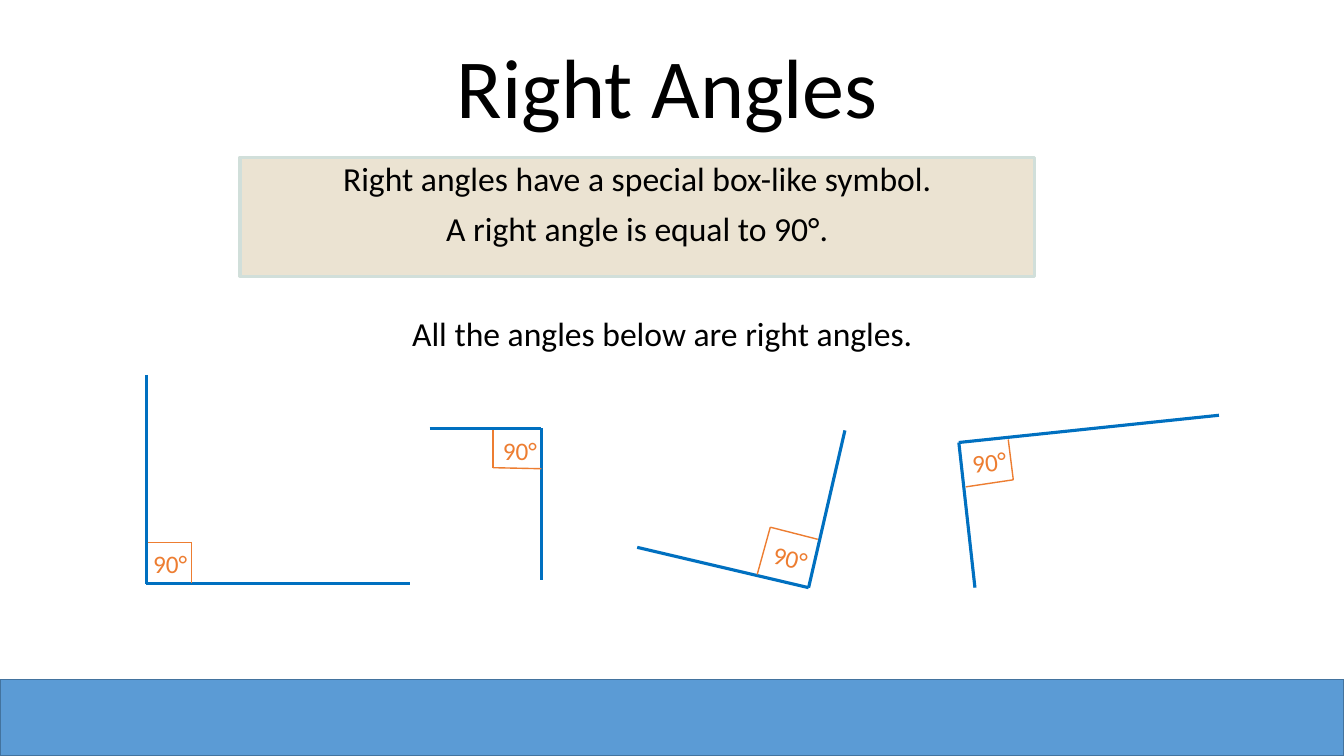
from dataclasses import dataclass
from typing import Any

from lxml.etree import SubElement
from pptx import Presentation
from pptx.dml.color import RGBColor
from pptx.enum.shapes import MSO_CONNECTOR, MSO_SHAPE
from pptx.enum.text import MSO_ANCHOR, MSO_AUTO_SIZE, PP_ALIGN
from pptx.oxml.ns import qn
from pptx.util import Inches, Pt

Point = tuple[float, float]
Rect = tuple[float, float, float, float]

BLACK = "000000"
BLUE = "0070C0"
ORANGE = "ED7D31"


@dataclass(frozen=True)
class Angle:
    rays: tuple[Point, Point, Point]
    mark: tuple[Point, Point, Point]
    label: Rect
    turn: float = 0


@dataclass(frozen=True)
class Panel:
    area: Rect
    fill: str
    edge: str
    width: float


ANGLES = [
    Angle(((1.45, 3.72), (1.45, 5.79), (4.07, 5.79)),
          ((1.47, 5.38), (1.9, 5.38), (1.9, 5.78)), (1.42, 5.39, 0.59, 0.4)),
    Angle(((4.26, 4.25), (5.37, 4.25), (5.37, 5.75)),
          ((4.89, 4.27), (4.89, 4.64), (5.37, 4.65)), (4.89, 4.27, 1.39, 0.4)),
    Angle(((6.32, 5.43), (8.02, 5.83), (8.38, 4.27)),
          ((7.51, 5.7), (7.64, 5.23), (8.11, 5.35)), (7.56, 5.44, 1.39, 0.4), 13.7),
    Angle(((12.09, 4.12), (9.51, 4.39), (9.67, 5.83)),
          ((10, 4.36), (10.05, 4.76), (9.58, 4.83)), (9.54, 4.33, 1.39, 0.4), 353.2),
]
BAR = Panel((0, 6.74, 13.33, 0.76), "5B9BD5", "43739E", 1)
FACTS = Panel((2.38, 1.56, 7.88, 1.18), "EBE3D2", "D1DFDA", 2.25)


def apply(item: Any, values: dict[str, Any]) -> None:
    for name, value in values.items():
        setattr(item, name, value)


def paint(target: Any, color: str) -> None:
    target.rgb = RGBColor.from_string(color)


def place(shape: Any, area: Rect) -> None:
    sides = ("left", "top", "width", "height")
    apply(shape, dict(zip(sides, map(Inches, area))))


def write(shape: Any, lines: list[str], size: float, color: str = BLACK,
          frame: dict[str, Any] | None = None, para: dict[str, Any] | None = None) -> None:
    text = shape.text_frame
    apply(text, {"word_wrap": True, "auto_size": MSO_AUTO_SIZE.NONE,
                 "vertical_anchor": MSO_ANCHOR.TOP} | (frame or {}))
    for i, words in enumerate(lines):
        part = text.paragraphs[0] if i == 0 else text.add_paragraph()
        apply(part, {"alignment": PP_ALIGN.CENTER} | (para or {}))
        run = part.add_run()
        run.text = words
        apply(run.font, {"name": "Calibri", "size": Pt(size)})
        paint(run.font.color, color)


def add_panel(slide: Any, panel: Panel) -> Any:
    shape = slide.shapes.add_shape(MSO_SHAPE.RECTANGLE, *map(Inches, panel.area))
    shape.shadow.inherit = False
    shape.fill.solid()
    paint(shape.fill.fore_color, panel.fill)
    paint(shape.line.color, panel.edge)
    shape.line.width = Pt(panel.width)
    return shape


def add_path(slide: Any, points: tuple[Point, ...], color: str, width: float) -> None:
    for start, end in zip(points, points[1:]):
        line = slide.shapes.add_connector(MSO_CONNECTOR.STRAIGHT, *map(Inches, start + end))
        paint(line.line.color, color)
        line.line.width = Pt(width)
        SubElement(line._element.spPr, qn("a:effectLst"))


def add_angle(slide: Any, angle: Angle) -> None:
    add_path(slide, angle.rays, BLUE, 2.25)
    label = slide.shapes.add_textbox(*map(Inches, angle.label))
    label.rotation = angle.turn
    write(label, ["90°"], 18, ORANGE, para={"alignment": PP_ALIGN.LEFT})
    add_path(slide, angle.mark, ORANGE, 1)


def main() -> None:
    deck = Presentation()
    apply(deck, {"slide_width": Inches(13.33), "slide_height": Inches(7.5)})
    slide = deck.slides.add_slide(deck.slide_layouts[5])

    add_panel(slide, BAR)
    title = slide.shapes.title
    place(title, (0.87, -0.04, 11.5, 1.45))
    write(title, ["Right Angles"], 60,
          frame={"vertical_anchor": MSO_ANCHOR.BOTTOM}, para={"line_spacing": 0.9})

    facts = ["Right angles have a special box-like symbol.", "A right angle is equal to 90°."]
    write(add_panel(slide, FACTS), facts, 24,
          para={"line_spacing": 0.9, "space_before": Pt(10)})

    intro = slide.shapes.add_textbox(*map(Inches, (3.15, 3.06, 6.84, 0.5)))
    write(intro, ["All the angles below are right angles."], 24)

    for angle in ANGLES:
        add_angle(slide, angle)
    deck.save("out.pptx")


if __name__ == "__main__":
    main()
